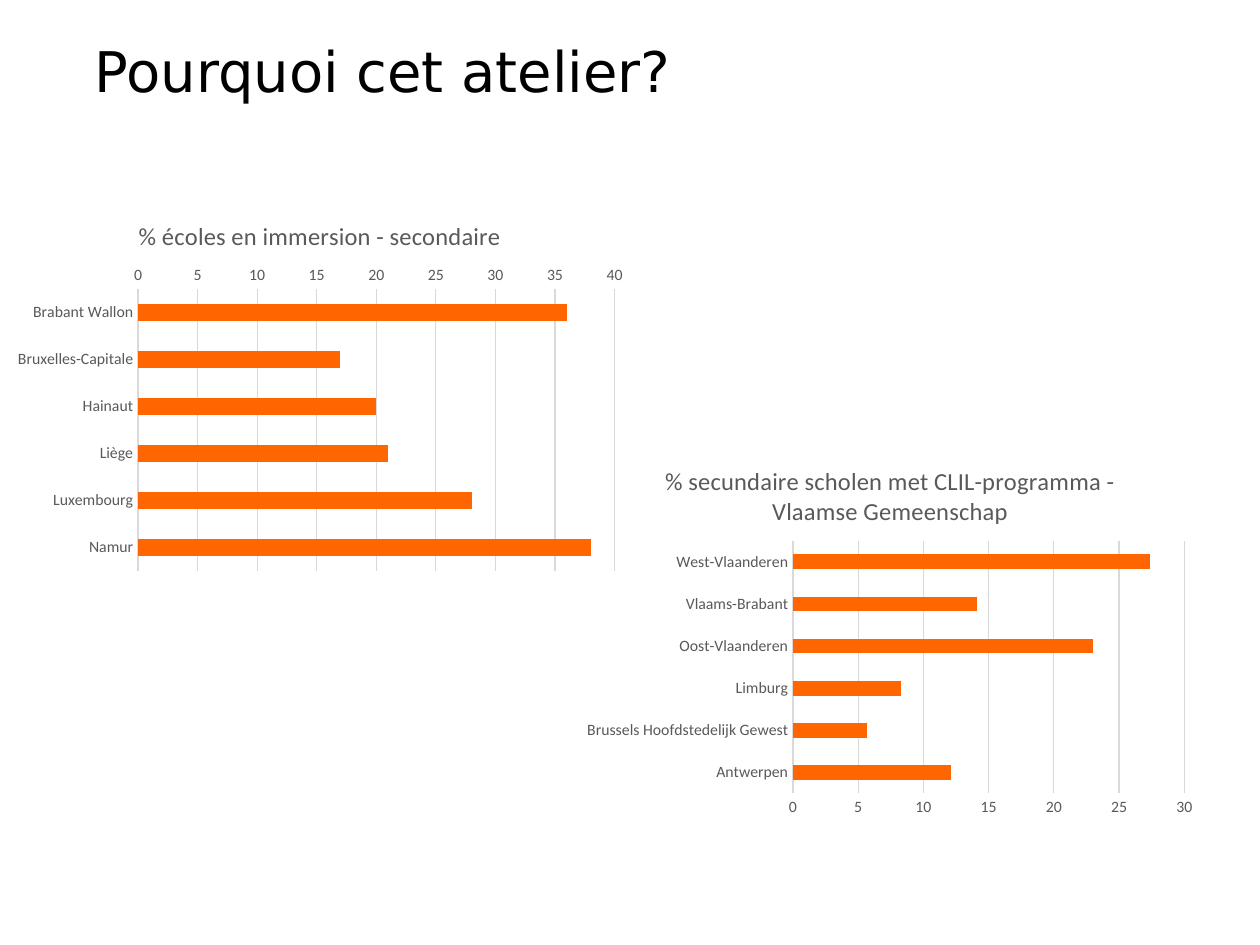
from lxml import etree
from pptx import Presentation
from pptx.chart.data import CategoryChartData
from pptx.dml.color import RGBColor
from pptx.enum import chart as ch, text
from pptx.oxml import parse_xml
from pptx.oxml.ns import nsdecls
from pptx.util import Pt

GREY, GRID, ORANGE = "595959", "D9D9D9", "FF6600"
CHART_W, CHART_H = 360, 216


def color(hex_code):
    return RGBColor.from_string(hex_code)


def set_font(font, size, hex_code, name="Calibri"):
    font.size, font.name, font.bold = Pt(size), name, False
    font.color.rgb = color(hex_code)


def set_line(line, hex_code):
    line.color.rgb = color(hex_code)
    line.width = Pt(0.75)


def manual_layout(x, y, w=None, h=None):
    """Return a chart layout element for a box in points within the chart."""
    layout = parse_xml(f"<c:layout {nsdecls('c')}><c:manualLayout/></c:layout>")
    manual = layout[0]

    def add(tag, value):
        etree.SubElement(manual, f"{{{layout.nsmap['c']}}}{tag}").set("val", str(value))

    if w is not None:
        add("layoutTarget", "inner")
    add("xMode", "edge")
    add("yMode", "edge")
    for tag, value, full in (("x", x, CHART_W), ("y", y, CHART_H),
                             ("w", w, CHART_W), ("h", h, CHART_H)):
        if value is not None:
            add(tag, round(value / full, 4))
    return layout


def add_heading(s, left, top, width, height, words):
    tf = s.shapes.add_textbox(Pt(left), Pt(top), Pt(width), Pt(height)).text_frame
    tf.word_wrap = True
    tf.auto_size = text.MSO_AUTO_SIZE.NONE
    tf.margin_left = tf.margin_right = tf.margin_top = tf.margin_bottom = 0
    p = tf.paragraphs[0]
    p.text = words
    set_font(p.font, 32, "000000", "DejaVu Sans")


def add_bar_chart(s, left, top, title, values, maximum, title_at, plot_box, reverse=False):
    data = CategoryChartData()
    data.categories = list(values)
    data.add_series("Series 1", list(values.values()))
    chart = s.shapes.add_chart(ch.XL_CHART_TYPE.BAR_CLUSTERED, Pt(left), Pt(top),
                               Pt(CHART_W), Pt(CHART_H), data).chart
    set_font(chart.font, 10, "000000")
    chart.has_legend = False

    chart.has_title = True
    p = chart.chart_title.text_frame.paragraphs[0]
    p.text = title
    set_font(p.font, 14, GREY)
    chart.chart_title.include_in_layout = False
    title_xml = chart.chart_title._element
    for old in title_xml.xpath("c:layout"):
        title_xml.remove(old)
    title_xml.xpath("c:tx")[0].addnext(manual_layout(*title_at))

    plot_xml = chart._chartSpace.chart.plotArea
    for old in plot_xml.xpath("c:layout"):
        plot_xml.remove(old)
    plot_xml.insert(0, manual_layout(*plot_box))

    plot = chart.plots[0]
    plot.gap_width = 182
    plot.vary_by_categories = False
    fill = plot.series[0].format.fill
    fill.solid()
    fill.fore_color.rgb = color(ORANGE)

    cat, val = chart.category_axis, chart.value_axis
    for axis in (cat, val):
        axis.major_tick_mark = axis.minor_tick_mark = ch.XL_TICK_MARK.NONE
        set_font(axis.tick_labels.font, 9, GREY)
    cat.reverse_order = reverse
    set_line(cat.format.line, GRID)
    val.minimum_scale, val.maximum_scale, val.major_unit = 0, maximum, 5
    val.format.line.fill.background()
    val.has_major_gridlines = True
    set_line(val.major_gridlines.format.line, GRID)
    val.tick_labels.number_format = "0"
    val.tick_labels.number_format_is_linked = False


def main():
    prs = Presentation()
    prs.slide_width, prs.slide_height = Pt(720), Pt(540)
    s = prs.slides.add_slide(prs.slide_layouts[6])
    add_heading(s, 54, 20.7, 635, 96.5, "Pourquoi cet atelier?")
    add_bar_chart(
        s, 328.3, 254.9, "% secundaire scholen met CLIL-programma - Vlaamse Gemeenschap",
        {"Antwerpen": 12.1, "Brussels Hoofdstedelijk Gewest": 5.7, "Limburg": 8.3,
         "Oost-Vlaanderen": 23, "Vlaams-Brabant": 14.1, "West-Vlaanderen": 27.4},
        30, (49.2, 7.5), (124.8, 54.2, 223.7, 144.3))
    add_bar_chart(
        s, 2.9, 115.2, "% écoles en immersion - secondaire",
        {"Brabant Wallon": 36, "Bruxelles-Capitale": 17, "Hainaut": 20,
         "Liège": 21, "Luxembourg": 28, "Namur": 38},
        40, (73.8, 7.5), (76, 50, 272.3, 161.2), reverse=True)
    prs.save("out.pptx")


if __name__ == "__main__":
    main()
